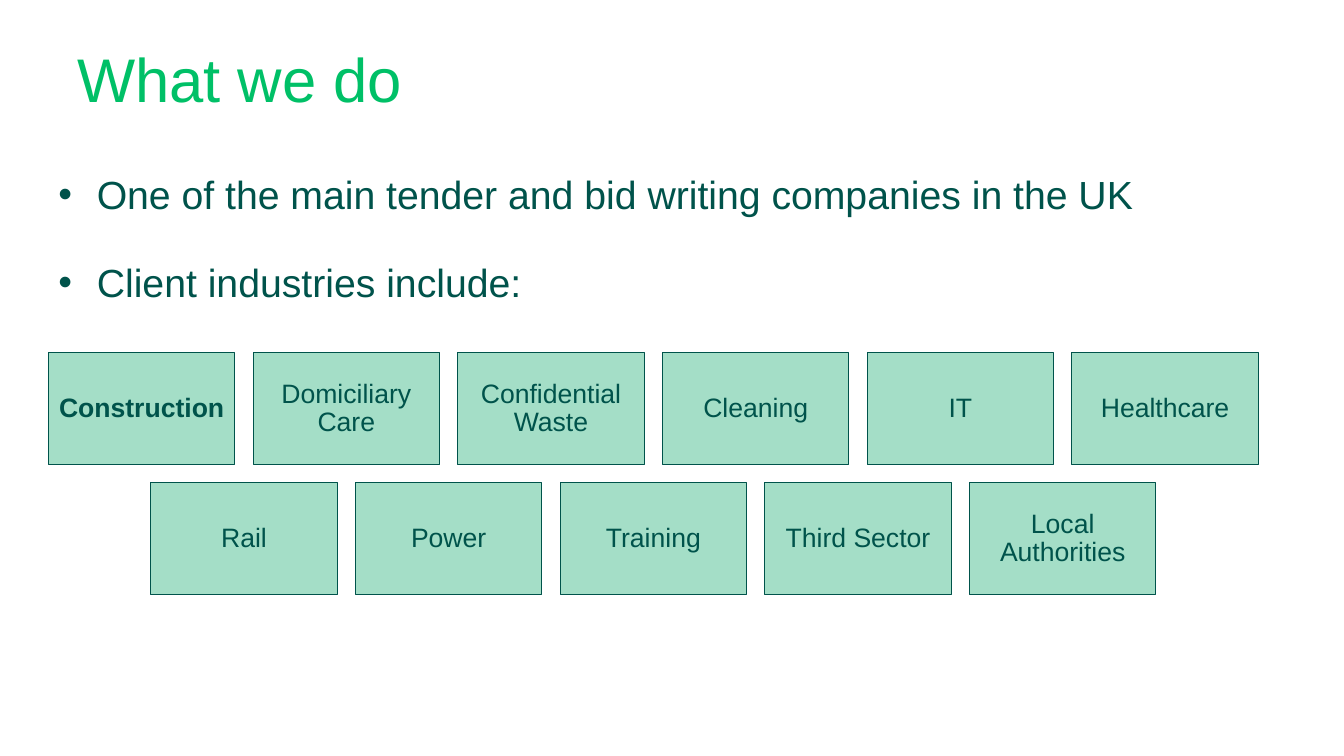
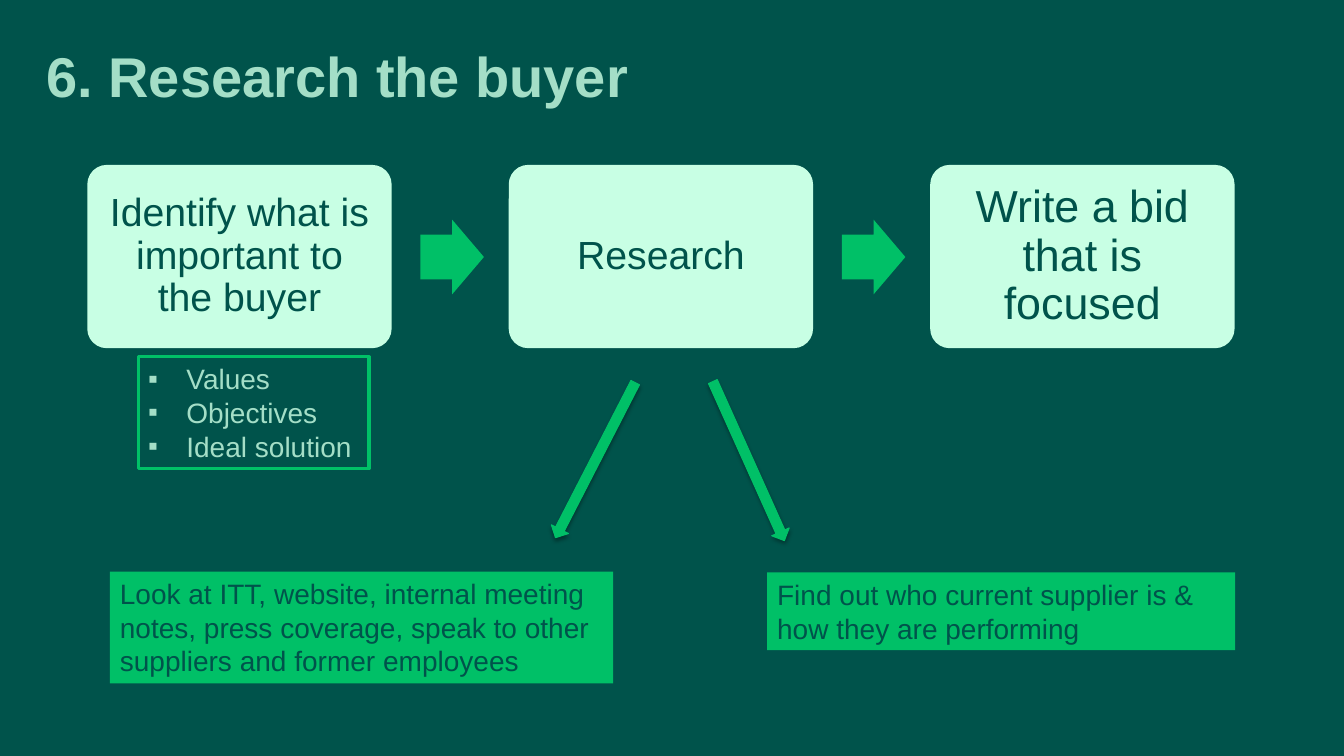
import lxml.etree
import pptx
import pptx.dml.color
import pptx.enum.shapes
import pptx.enum.text
import pptx.oxml.ns
import pptx.util

Inches = pptx.util.Inches
Pt = pptx.util.Pt
RGBColor = pptx.dml.color.RGBColor
Kind = pptx.enum.shapes.MSO_SHAPE
Align = pptx.enum.text.PP_ALIGN
Anchor = pptx.enum.text.MSO_ANCHOR
qn = pptx.oxml.ns.qn

WHITE = RGBColor(0xFF, 0xFF, 0xFF)
DARK = RGBColor(0x00, 0x53, 0x4B)
GREEN = RGBColor(0x00, 0xC0, 0x67)
SAGE = RGBColor(0xA4, 0xDE, 0xC7)
MINT = RGBColor(0xC8, 0xFF, 0xE4)
FONT = "Arial"


class Deck:
    def __init__(self):
        self.file = pptx.Presentation()
        self.file.slide_width = Inches(13.33)
        self.file.slide_height = Inches(7.5)
        self.slide = None

    def page(self, layout, back):
        self.slide = self.file.slides.add_slide(self.file.slide_layouts[layout])
        fill = self.slide.background.fill
        fill.solid()
        fill.fore_color.rgb = back

    def place(self, item, left, top, width, height):
        item.left, item.top = Inches(left), Inches(top)
        item.width, item.height = Inches(width), Inches(height)

    def bullet(self, para, mark):
        props = para._p.get_or_add_pPr()
        props.set("marL", str(Inches(0.38)))
        props.set("indent", str(-Inches(0.38)))
        lxml.etree.SubElement(props, qn("a:buFont"), typeface=FONT)
        lxml.etree.SubElement(props, qn("a:buChar"), char=mark)

    def text(self, item, lines, size, color, bold=False, align=Align.LEFT,
             anchor=Anchor.TOP, mark=None, space=1.0, gap=0, inset=None):
        """Fill a shape with one paragraph per line; inset is in inches."""
        frame = item.text_frame
        frame.word_wrap = True
        frame.auto_size = pptx.enum.text.MSO_AUTO_SIZE.NONE
        frame.vertical_anchor = anchor
        if inset is not None:
            frame.margin_left = frame.margin_right = Inches(inset)
            frame.margin_top = frame.margin_bottom = Inches(inset)
        for num, line in enumerate(lines):
            para = frame.add_paragraph() if num else frame.paragraphs[0]
            if mark:
                self.bullet(para, mark)
            para.alignment = align
            para.line_spacing = space
            para.space_before = Pt(gap if num else 0)
            run = para.add_run()
            run.text = line
            run.font.name = FONT
            run.font.size = Pt(size)
            run.font.bold = bold
            run.font.color.rgb = color

    def title(self, text, at, size, color, **style):
        item = self.slide.shapes.title
        self.place(item, *at)
        self.text(item, [text], size, color, **style)

    def list(self, lines, at, **style):
        item = self.slide.placeholders[1]
        self.place(item, *at)
        self.text(item, lines, 28, DARK, mark="•", **style)

    def shape(self, kind, at, fill=None, line=None, width=0.75, adjust=()):
        item = self.slide.shapes.add_shape(kind, *map(Inches, at))
        item.shadow.inherit = False
        for num, value in enumerate(adjust):
            item.adjustments[num] = value
        if fill is None:
            item.fill.background()
        else:
            item.fill.solid()
            item.fill.fore_color.rgb = fill
        if line is None:
            item.line.fill.background()
        else:
            item.line.color.rgb = line
            item.line.width = Pt(width)
        return item

    def label(self, item, text, size, bold=False, inset=0.08):
        """Put centred text in the middle of a shape."""
        self.text(item, [text], size, DARK, bold=bold, align=Align.CENTER,
                  anchor=Anchor.MIDDLE, space=0.9, inset=inset)

    def note(self, text, at):
        self.text(self.shape(Kind.RECTANGLE, at, GREEN), [text], 20, DARK)

    def arrow(self, left, top, turn):
        """Draw a thin, turned down arrow with a soft shadow."""
        item = self.shape(Kind.DOWN_ARROW, (left, top, 0.19, 1.73), GREEN, GREEN)
        item.rotation = turn
        effects = item._element.spPr.find(qn("a:effectLst"))
        shade = lxml.etree.SubElement(
            effects, qn("a:outerShdw"), blurRad=str(Pt(3.1)), dist=str(Pt(1.8)),
            dir="5400000", rotWithShape="0")
        tint = lxml.etree.SubElement(shade, qn("a:srgbClr"), val="000000")
        lxml.etree.SubElement(tint, qn("a:alpha"), val="35000")


def work(deck):
    deck.page(1, WHITE)
    deck.title("What we do", (0.48, 0.15, 3.8, 1.25), 44, GREEN,
               align=Align.CENTER, anchor=Anchor.MIDDLE)
    deck.list(["One of the main tender and bid writing companies in the UK",
               "Client industries include:"],
              (0.48, 1.41, 12.24, 4.95), space=1.5, gap=12)
    rows = [
        ["Construction", "Domiciliary Care", "Confidential Waste",
         "Cleaning", "IT", "Healthcare"],
        ["Rail", "Power", "Training", "Third Sector", "Local Authorities"],
    ]
    step = 2.03
    for row, names in enumerate(rows):
        left = 0.48 + (len(rows[0]) - len(names)) * step / 2
        for col, name in enumerate(names):
            at = (left + col * step, 3.5 + row * 1.29, 1.85, 1.11)
            tile = deck.shape(Kind.RECTANGLE, at, SAGE, DARK)
            deck.label(tile, name, 19, bold=name == "Construction")


def buyer(deck):
    deck.page(5, DARK)
    deck.title("6. Research the buyer", (0.36, -0.12, 12.05, 1.25), 40, SAGE,
               bold=True, anchor=Anchor.BOTTOM)
    steps = [("Identify what is important to the buyer", 28),
             ("Research", 28), ("Write a bid that is focused", 32)]
    for num, (text, size) in enumerate(steps):
        left = 0.88 + num * 4.18
        if num:
            deck.shape(Kind.RIGHT_ARROW, (left - 0.89, 2.18, 0.63, 0.74),
                       GREEN, adjust=(0.6, 0.5))
        card = deck.shape(Kind.ROUNDED_RECTANGLE, (left, 1.65, 2.99, 1.79),
                          MINT, MINT, 2, (0.1,))
        deck.label(card, text, size, inset=0.12)
    goals = deck.shape(Kind.RECTANGLE, (1.37, 3.54, 2.29, 1.11),
                       line=GREEN, width=2.25)
    deck.text(goals, ["Values", "Objectives", "Ideal solution"], 20, SAGE,
              mark="▪")
    deck.arrow(5.81, 3.7, 27.2)
    deck.arrow(7.33, 3.71, 335.8)
    deck.note("Look at ITT, website, internal meeting notes, press coverage, "
              "speak to other suppliers and former employees",
              (1.09, 5.67, 4.99, 1.11))
    deck.note("Find out who current supplier is & how they are performing",
              (7.61, 5.68, 4.64, 0.77))


def main():
    deck = Deck()
    work(deck)
    buyer(deck)
    deck.file.save("out.pptx")


if __name__ == "__main__":
    main()
